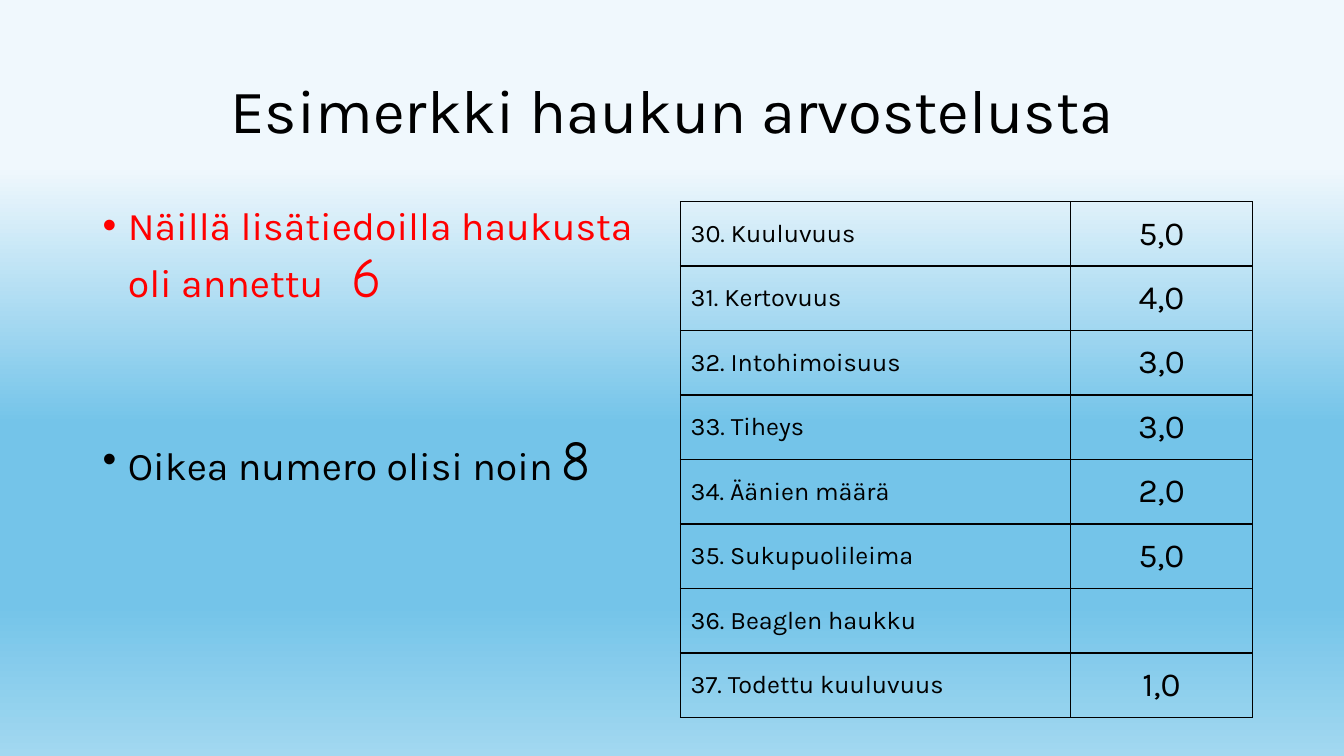
import pptx
import pptx.util
import pptx.dml.color
import pptx.enum.text
import pptx.oxml
import pptx.oxml.ns
import copy

Inches = pptx.util.Inches
Pt = pptx.util.Pt
RGBColor = pptx.dml.color.RGBColor
Align = pptx.enum.text.PP_ALIGN
Anchor = pptx.enum.text.MSO_ANCHOR
qn = pptx.oxml.ns.qn

BLACK = RGBColor(0x00, 0x00, 0x00)
RED = RGBColor(0xFF, 0x00, 0x00)
PALE = RGBColor(0xF0, 0xF8, 0xFD)
SKY = RGBColor(0x74, 0xC4, 0xE9)
LIGHT_SKY = RGBColor(0xA2, 0xD8, 0xF0)
BODY_FONT = "Karla"
NUMBER_FONT = "Comic Neue"

SCORES = [
    ("30. Kuuluvuus", "5,0"),
    ("31. Kertovuus", "4,0"),
    ("32. Intohimoisuus", "3,0"),
    ("33. Tiheys", "3,0"),
    ("34. Äänien määrä", "2,0"),
    ("35. Sukupuolileima", "5,0"),
    ("36. Beaglen haukku", ""),
    ("37. Todettu kuuluvuus", "1,0"),
]


class ScoreSlide:
    def __init__(self, presentation):
        self.slide = presentation.slides.add_slide(presentation.slide_layouts[5])

    def apply(self, target, formats):
        for name, value in formats.items():
            setattr(target, name, value)

    def add_run(self, paragraph, text, size, color=BLACK, font=BODY_FONT):
        run = paragraph.add_run()
        run.text = text
        self.apply(run.font, {"size": Pt(size), "name": font})
        run.font.color.rgb = color

    def gradient_background(self, stops):
        fill = self.slide.background.fill
        fill.gradient()
        fill.gradient_angle = 270
        stop_list = next(self.slide.element.iter(qn("a:gsLst")))
        while len(stop_list) < len(stops):
            stop_list.append(copy.deepcopy(stop_list[0]))
        for stop, (position, color) in zip(fill.gradient_stops, stops):
            stop.position = position
            stop.color.rgb = color

    def title(self, text, left, top, width, height):
        title = self.slide.shapes.title
        self.apply(title, {"left": left, "top": top, "width": width, "height": height})
        title.text_frame.vertical_anchor = Anchor.MIDDLE
        paragraph = title.text_frame.paragraphs[0]
        self.apply(paragraph, {"alignment": Align.CENTER, "line_spacing": 0.9})
        self.add_run(paragraph, text, 44)

    def bullets(self, items, left, top, width, height):
        frame = self.slide.shapes.add_textbox(left, top, width, height).text_frame
        frame.word_wrap = True
        for index, (space_before, color, text, number) in enumerate(items):
            paragraph = frame.add_paragraph() if index else frame.paragraphs[0]
            self.apply(paragraph, {"line_spacing": 0.9, "space_before": Pt(space_before)})
            self.add_run(paragraph, text, 28, color)
            self.add_run(paragraph, number, 40, color, NUMBER_FONT)
            properties = paragraph._p.get_or_add_pPr()
            properties.set("marL", str(Inches(0.25)))
            properties.set("indent", str(-Inches(0.25)))
            for tag, attribute, value in (("buFont", "typeface", "Arial"), ("buChar", "char", "•")):
                bullet = pptx.oxml.parse_xml(
                    f'<a:{tag} {pptx.oxml.ns.nsdecls("a")} {attribute}="{value}"/>')
                properties.append(bullet)

    def cell_borders(self, cell):
        for side in ("lnL", "lnR", "lnT", "lnB"):
            border = pptx.oxml.parse_xml(
                f'<a:{side} {pptx.oxml.ns.nsdecls("a")} w="{Pt(1)}">'
                f'<a:solidFill><a:srgbClr val="{BLACK}"/></a:solidFill></a:{side}>')
            cell._tc.get_or_add_tcPr().append(border)

    def table(self, rows, column_widths, row_height, left, top):
        table = self.slide.shapes.add_table(
            len(rows), len(column_widths), left, top,
            sum(column_widths), row_height * len(rows)).table
        self.apply(table, {"first_row": False, "horz_banding": False})
        for column, width in zip(table.columns, column_widths):
            column.width = width
        styles = ((18, Align.LEFT), (24, Align.CENTER))
        for row, texts in zip(table.rows, rows):
            row.height = row_height
            for cell, text, (size, alignment) in zip(row.cells, texts, styles):
                self.cell_borders(cell)
                cell.fill.background()
                cell.vertical_anchor = Anchor.MIDDLE
                paragraph = cell.text_frame.paragraphs[0]
                paragraph.alignment = alignment
                if text:
                    self.add_run(paragraph, text, size)


def main():
    presentation = pptx.Presentation()
    presentation.slide_width = Inches(13.33)
    presentation.slide_height = Inches(7.5)
    page = ScoreSlide(presentation)
    page.gradient_background([(0.22, PALE), (0.56, SKY), (0.8, SKY), (1.0, LIGHT_SKY)])
    page.title("Esimerkki haukun arvostelusta",
               Inches(0.92), Inches(0.4), Inches(11.5), Inches(1.45))
    page.bullets(
        [(10, RED, "Näillä lisätiedoilla haukusta oli annettu ", " 6"),
         (88, BLACK, "Oikea numero olisi noin ", "8")],
        Inches(0.92), Inches(2), Inches(5.67), Inches(4.76))
    page.table(SCORES, [Inches(3.87), Inches(1.8)], Inches(0.64), Inches(6.75), Inches(2))
    presentation.save("out.pptx")


if __name__ == "__main__":
    main()
